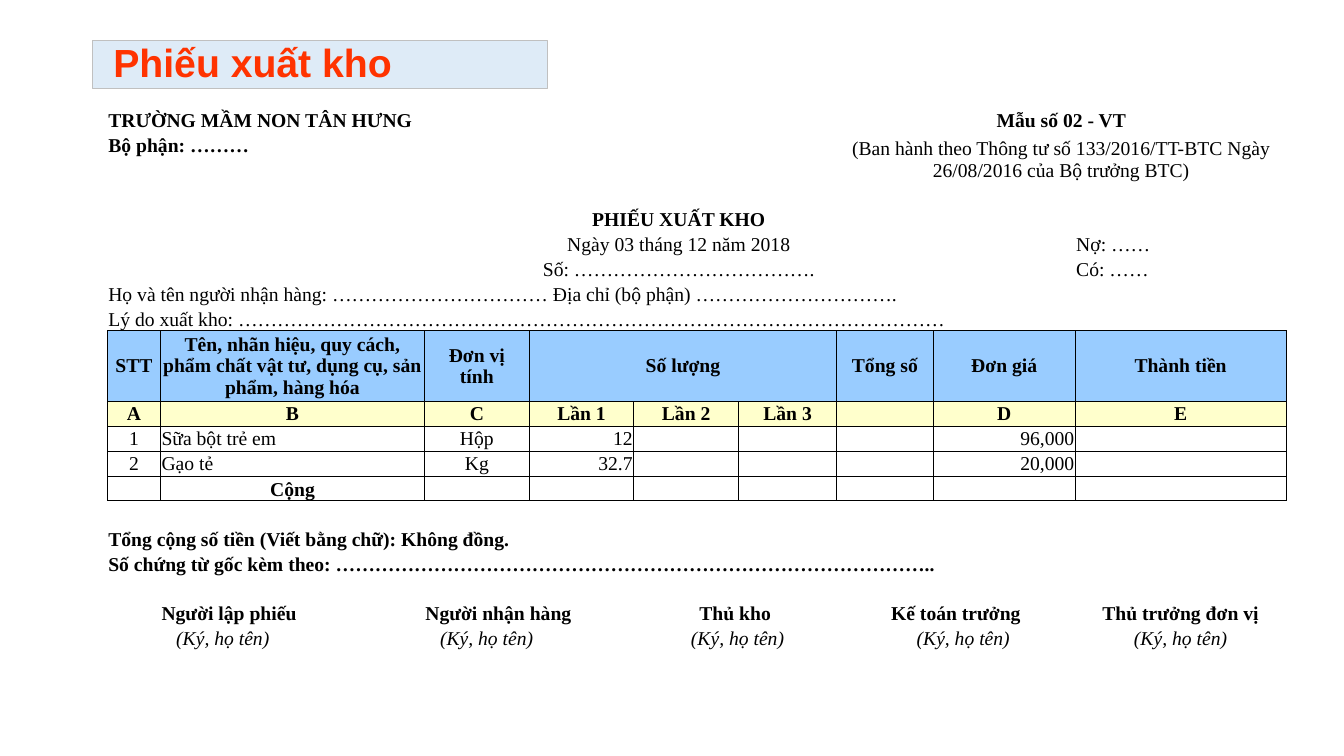
"""Build a slide with a warehouse issue slip laid out on a table grid."""
from lxml.etree import SubElement
from pptx import Presentation
from pptx.dml.color import RGBColor
from pptx.enum.shapes import MSO_SHAPE
from pptx.enum.text import MSO_ANCHOR as ANCHOR, PP_ALIGN as ALIGN
from pptx.oxml.ns import qn
from pptx.util import Pt

BLACK = RGBColor(0x00, 0x00, 0x00)
TITLE_RED = RGBColor(0xFF, 0x33, 0x00)
TITLE_FILL = RGBColor(0xDE, 0xEB, 0xF7)
TITLE_LINE = RGBColor(0xC0, 0xC0, 0xC0)
HEADER_BLUE = RGBColor(0x99, 0xCC, 0xFF)
LETTER_YELLOW = RGBColor(0xFF, 0xFF, 0xCC)
NO_STYLE = "{2D5ABB26-0587-4C30-8999-92F81FD0307C}"

COLUMN_WIDTHS = [38, 188.5, 75, 74.5, 75, 70, 69, 101.5, 150.5]
ROW_COUNT = 22
HEADER_ROW, LETTER_ROW, TOTAL_ROW = 9, 10, 13
SIGN_ROW = 18


def write(frame, text, size=14, font="Times New Roman", color=BLACK, bold=False,
          italic=False, align=ALIGN.LEFT, indent=0):
    paragraph = frame.paragraphs[0]
    paragraph.text = text
    paragraph.alignment = align
    if indent:
        paragraph._p.get_or_add_pPr().set("marL", str(Pt(indent)))
    for line_break in paragraph._p.findall(qn("a:br")):
        SubElement(line_break, qn("a:rPr"), sz=str(size * 100))
    for run in paragraph.runs:
        run.font.name = font
        run.font.size = Pt(size)
        run.font.bold = bold
        run.font.italic = italic
        run.font.color.rgb = color


presentation = Presentation()
presentation.slide_width = Pt(960)
presentation.slide_height = Pt(540)
slide = presentation.slides.add_slide(presentation.slide_layouts[6])

title = slide.shapes.add_shape(MSO_SHAPE.RECTANGLE, Pt(66), Pt(28.8), Pt(325), Pt(34.5))
title.shadow.inherit = False
title.fill.solid()
title.fill.fore_color.rgb = TITLE_FILL
title.line.color.rgb = TITLE_LINE
title.line.width = Pt(0.75)
title.text_frame.margin_left = Pt(15)
title.text_frame.vertical_anchor = ANCHOR.MIDDLE
write(title.text_frame, "Phiếu xuất kho", size=28, font="Arial", color=TITLE_RED, bold=True)
title.text_frame.paragraphs[0].line_spacing = 0.9

frame = slide.shapes.add_table(ROW_COUNT, len(COLUMN_WIDTHS), Pt(76.7), Pt(76.3),
                               Pt(sum(COLUMN_WIDTHS)), Pt(425))
table = frame.table
table.first_row = False
table.horz_banding = False
table._tbl.tblPr.find(qn("a:tableStyleId")).text = NO_STYLE
for column, width in zip(table.columns, COLUMN_WIDTHS):
    column.width = Pt(width)
for row in table.rows:
    row.height = Pt(17.5)
table.rows[HEADER_ROW].height = Pt(50.7)
table.rows[ROW_COUNT - 1].height = Pt(24.5)

row_fills = {HEADER_ROW: HEADER_BLUE, LETTER_ROW: LETTER_YELLOW}
for row in range(ROW_COUNT):
    for column in range(len(COLUMN_WIDTHS)):
        cell = table.cell(row, column)
        cell.margin_left = cell.margin_right = cell.margin_top = Pt(0.7)
        cell.margin_bottom = 0
        in_grid = HEADER_ROW <= row < TOTAL_ROW
        cell.vertical_anchor = ANCHOR.MIDDLE if in_grid else ANCHOR.BOTTOM
        cell.text_frame.paragraphs[0]._p.get_or_add_endParaRPr().set("sz", "1400")
        if HEADER_ROW <= row <= TOTAL_ROW:
            for side in ("a:lnL", "a:lnR", "a:lnT", "a:lnB"):
                border = SubElement(cell._tc.get_or_add_tcPr(), qn(side), w=str(Pt(0.5)))
                border_fill = SubElement(border, qn("a:solidFill"))
                SubElement(border_fill, qn("a:srgbClr"), val=str(BLACK))
        if row in row_fills:
            cell.fill.solid()
            cell.fill.fore_color.rgb = row_fills[row]
        else:
            cell.fill.background()

BOLD = {"bold": True}
CENTER = {"align": ALIGN.CENTER}
form_lines = [
    (0, 0, 1, 3, "TRƯỜNG MẦM NON TÂN HƯNG", BOLD),
    (0, 6, 1, 3, "Mẫu số 02 - VT", BOLD | CENTER),
    (1, 0, 1, 2, "Bộ phận: ………", BOLD),
    (1, 6, 2, 3, "(Ban hành theo Thông tư số 133/2016/TT-BTC Ngày 26/08/2016 của Bộ trưởng BTC)",
     CENTER),
    (4, 2, 1, 5, "PHIẾU XUẤT KHO", BOLD | CENTER),
    (5, 2, 1, 5, "Ngày 03 tháng 12 năm 2018", CENTER),
    (5, 8, 1, 1, "Nợ: ……", {}),
    (6, 2, 1, 5, "Số: ……………………………….", CENTER),
    (6, 8, 1, 1, "Có: ……", {}),
    (7, 0, 1, 8, "Họ và tên người nhận hàng: …………………………… Địa chỉ (bộ phận) ………………………….", {}),
    (8, 0, 1, 8, "Lý do xuất kho: ………………………………………………………………………………………………", {}),
    (15, 0, 1, 4, "Tổng cộng số tiền (Viết bằng chữ): Không đồng.", BOLD),
    (16, 0, 1, 8, "Số chứng từ gốc kèm theo: ………………………………………………………………………………..", BOLD),
]
signatures = [
    (1, 1, "Người lập phiếu", ALIGN.LEFT, 10.5),
    (2, 2, "Người nhận hàng", ALIGN.LEFT, 10.5),
    (4, 2, "Thủ kho", ALIGN.CENTER, 3.5),
    (6, 2, "Kế toán trưởng", ALIGN.CENTER, 10.5),
    (8, 1, "Thủ trưởng đơn vị", ALIGN.CENTER, 0),
]
for column, span, signer, align, indent in signatures:
    form_lines.append((SIGN_ROW, column, 1, span, signer, BOLD | {"align": align}))
    form_lines.append((SIGN_ROW + 1, column, 1, span, "(Ký, họ tên)",
                       {"italic": True, "align": align, "indent": indent}))

for row, column, height, width, text, style in form_lines:
    cell = table.cell(row, column)
    if height * width > 1:
        cell.merge(table.cell(row + height - 1, column + width - 1))
    write(cell.text_frame, text, **style)

table.cell(HEADER_ROW, 3).merge(table.cell(HEADER_ROW, 5))
goods_rows = [
    ["STT", "Tên, nhãn hiệu, quy cách, phẩm chất vật tư, dụng cụ, sản phẩm, hàng hóa",
     "Đơn vị\ntính", "Số lượng", "", "", "Tổng số", "Đơn giá", "Thành tiền"],
    ["A", "B", "C", "Lần 1", "Lần 2", "Lần 3", "", "D", "E"],
    ["1", "Sữa bột trẻ em", "Hộp", "12", "", "", "", "96,000", ""],
    ["2", "Gạo tẻ", "Kg", "32.7", "", "", "", "20,000", ""],
    ["", "Cộng", "", "", "", "", "", "", ""],
]
item_alignments = {1: ALIGN.LEFT, 3: ALIGN.RIGHT, 7: ALIGN.RIGHT}
for row, texts in enumerate(goods_rows, HEADER_ROW):
    is_item = LETTER_ROW < row < TOTAL_ROW
    for column, text in enumerate(texts):
        if text:
            align = item_alignments.get(column, ALIGN.CENTER) if is_item else ALIGN.CENTER
            write(table.cell(row, column).text_frame, text, bold=not is_item, align=align)

presentation.save("out.pptx")
